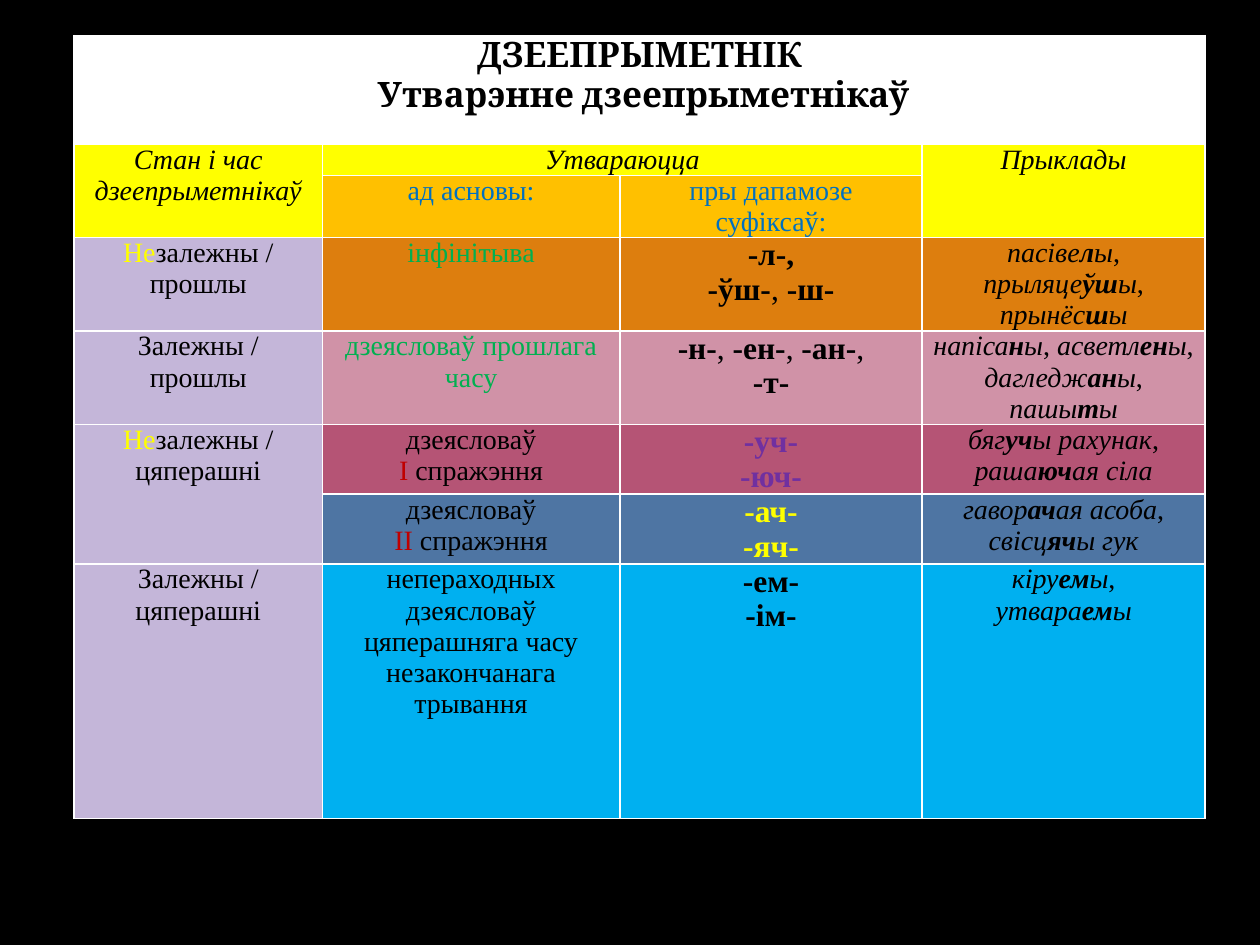
from lxml.etree import SubElement as Sub
from pptx import Presentation
from pptx.dml.color import RGBColor as RGB
from pptx.enum.text import PP_ALIGN as Align
from pptx.oxml.ns import qn
from pptx.util import Pt


class Theme:
    back, edge, ink = "000000", "FFFFFF", "000000"
    yellow, gold, lilac = "FFFF00", "FFC000", "C4B6D9"
    orange, pink, rose, steel, sky = "DD7E0E", "D092A7", "B55475", "4E75A3", "00B0F0"
    blue, green, red, purple = "0070C0", "00B050", "C00000", "7030A0"
    serif, head = "Times New Roman", "Cambria"
    title, large, body = 20, 18, 16


def write(cell, text, size=Theme.body, font=Theme.serif, ink=Theme.ink,
          accent=Theme.ink, slant=False):
    """Fill a cell line by line; * toggles bold, _ italic and ^ the accent colour."""
    if slant:
        text = "_" + text.replace(",", "_,_")
    state = {"*": False, "_": False, "^": False}
    frame = cell.text_frame
    for num, line in enumerate(text.split("\n")):
        para = frame.add_paragraph() if num else frame.paragraphs[0]
        para.alignment = Align.CENTER
        para.font.name, para.font.size = font, Pt(size)
        run = None
        for char in line:
            if char in state:
                state[char] = not state[char]
                run = None
                continue
            if run is None:
                run = para.add_run()
                run.font.bold, run.font.italic = state["*"], state["_"]
                run.font.color.rgb = RGB.from_string(accent if state["^"] else ink)
            run.text += char


def paint(cell, color):
    cell.fill.solid()
    cell.fill.fore_color.rgb = RGB.from_string(color)


deck = Presentation()
deck.slide_width, deck.slide_height = Pt(720), Pt(540)
slide = deck.slides.add_slide(deck.slide_layouts[6])
slide.background.fill.solid()
slide.background.fill.fore_color.rgb = RGB.from_string(Theme.back)

wide = [141.8, 170, 172.8, 161.6]
high = [62, 17.5, 35, 52, 52, 35, 35, 145.5]
grid = slide.shapes.add_table(len(high), len(wide), Pt(42.4), Pt(20.4),
                              Pt(sum(wide)), Pt(sum(high))).table
grid.first_row = grid.horz_banding = False
for col, size in zip(grid.columns, wide):
    col.width = Pt(size)
for row, size in zip(grid.rows, high):
    row.height = Pt(size)

# Margins and white borders
for cell in grid.iter_cells():
    cell.margin_left = cell.margin_right = Pt(5)
    cell.margin_top = cell.margin_bottom = Pt(0)
    props = cell._tc.get_or_add_tcPr()
    for side in ("lnL", "lnR", "lnT", "lnB"):
        line = Sub(props, qn("a:" + side), w=str(Pt(1)))
        Sub(Sub(line, qn("a:solidFill")), qn("a:srgbClr"), val=Theme.edge)

# Merged areas: first row, first column, last row, last column
for top, left, low, right in [(0, 0, 0, 3), (1, 0, 2, 0), (1, 1, 1, 2),
                              (1, 3, 2, 3), (5, 0, 6, 0)]:
    grid.cell(top, left).merge(grid.cell(low, right))

# Title and column heads
paint(grid.cell(0, 0), Theme.edge)
write(grid.cell(0, 0), "*ДЗЕЕПРЫМЕТНІК\n Утварэнне дзеепрыметнікаў",
      Theme.title, Theme.head)
for col, text in [(0, "Стан і час дзеепрыметнікаў"), (1, "Утвараюцца"), (3, "Прыклады")]:
    paint(grid.cell(1, col), Theme.yellow)
    write(grid.cell(1, col), text, slant=True)
for col, text in [(1, "ад асновы:"), (2, "пры дапамозе\nсуфіксаў:")]:
    paint(grid.cell(2, col), Theme.gold)
    write(grid.cell(2, col), text, ink=Theme.blue)

# Voice and tense
for row, text in [(3, "^Не^залежны /\nпрошлы"), (4, "Залежны /\nпрошлы"),
                  (5, "^Не^залежны /\nцяперашні"), (7, "Залежны /\nцяперашні")]:
    paint(grid.cell(row, 0), Theme.lilac)
    write(grid.cell(row, 0), text, accent=Theme.yellow)

# Row fill, stem and its colour, suffixes and their colour, examples
rules = [
    (Theme.orange, "інфінітыва", Theme.green,
     "*-л-,\n-ўш-*,* -ш-", Theme.ink,
     "пасіве*л*ы, прыляце*ўш*ы,\nпрынёс*ш*ы"),
    (Theme.pink, "дзеясловаў прошлага часу", Theme.green,
     "*-н-*,* -ен-*,* -ан-*,\n*-т-", Theme.ink,
     "напіса*н*ы, асветл*ен*ы, дагледж*ан*ы, пашы*т*ы"),
    (Theme.rose, "дзеясловаў\n^І^ спражэння", Theme.ink,
     "*-уч-\n-юч-", Theme.purple,
     "бяг*уч*ы рахунак,\nраша*юч*ая сіла"),
    (Theme.steel, "дзеясловаў\n^ІІ^ спражэння", Theme.ink,
     "*-ач-\n-яч-", Theme.yellow,
     "гавор*ач*ая асоба,\nсвісц*яч*ы гук"),
    (Theme.sky, "непераходных дзеясловаў\nцяперашняга часу\nнезакончанага трывання",
     Theme.ink, "*-ем-\n-ім-", Theme.ink,
     "кіру*ем*ы,\nутвара*ем*ы"),
]
for row, (color, stem, tint, ends, hue, words) in enumerate(rules, 3):
    for col in (1, 2, 3):
        paint(grid.cell(row, col), color)
    write(grid.cell(row, 1), stem, ink=tint, accent=Theme.red)
    write(grid.cell(row, 2), ends, Theme.large, ink=hue)
    write(grid.cell(row, 3), words, slant=True)

deck.save("out.pptx")
